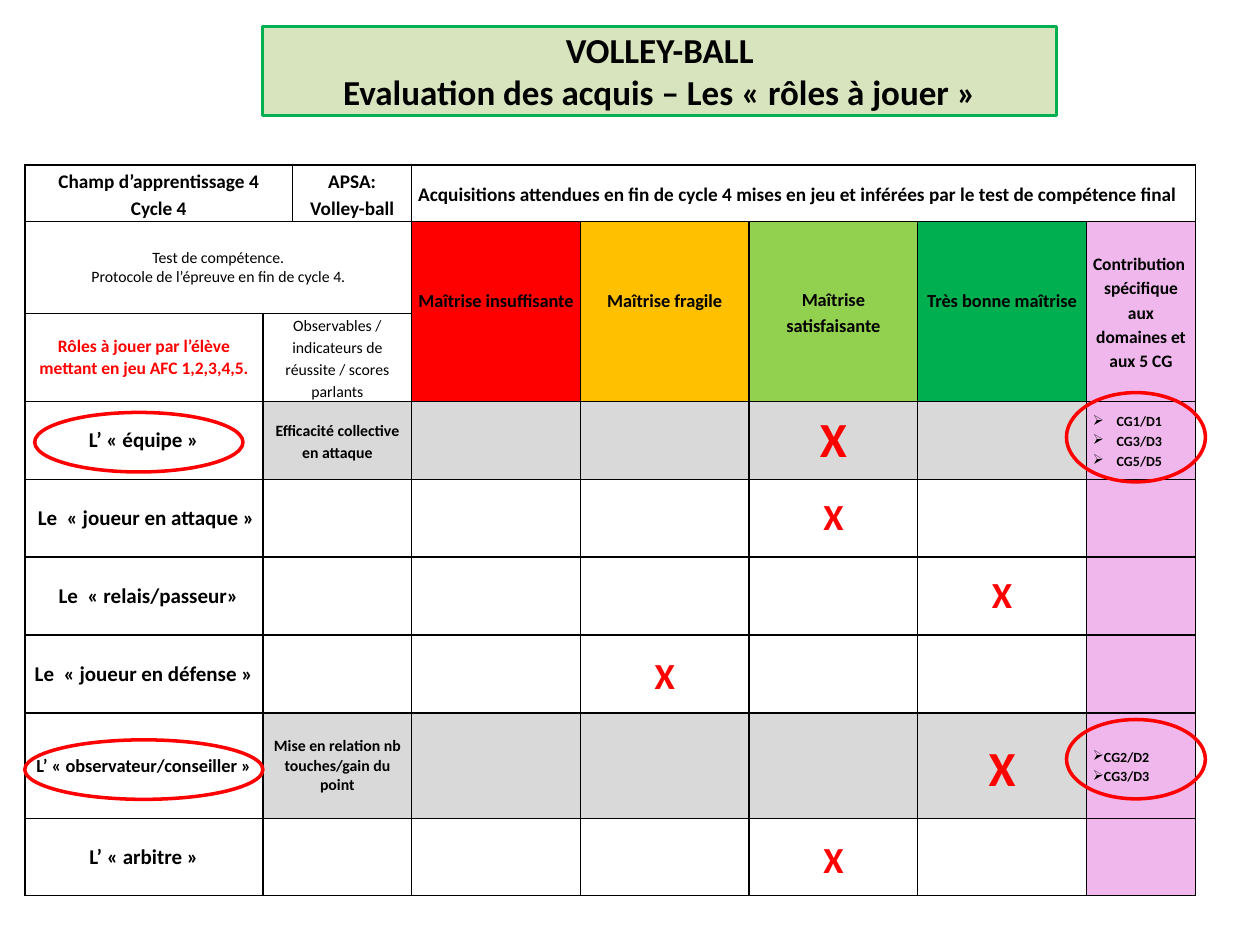
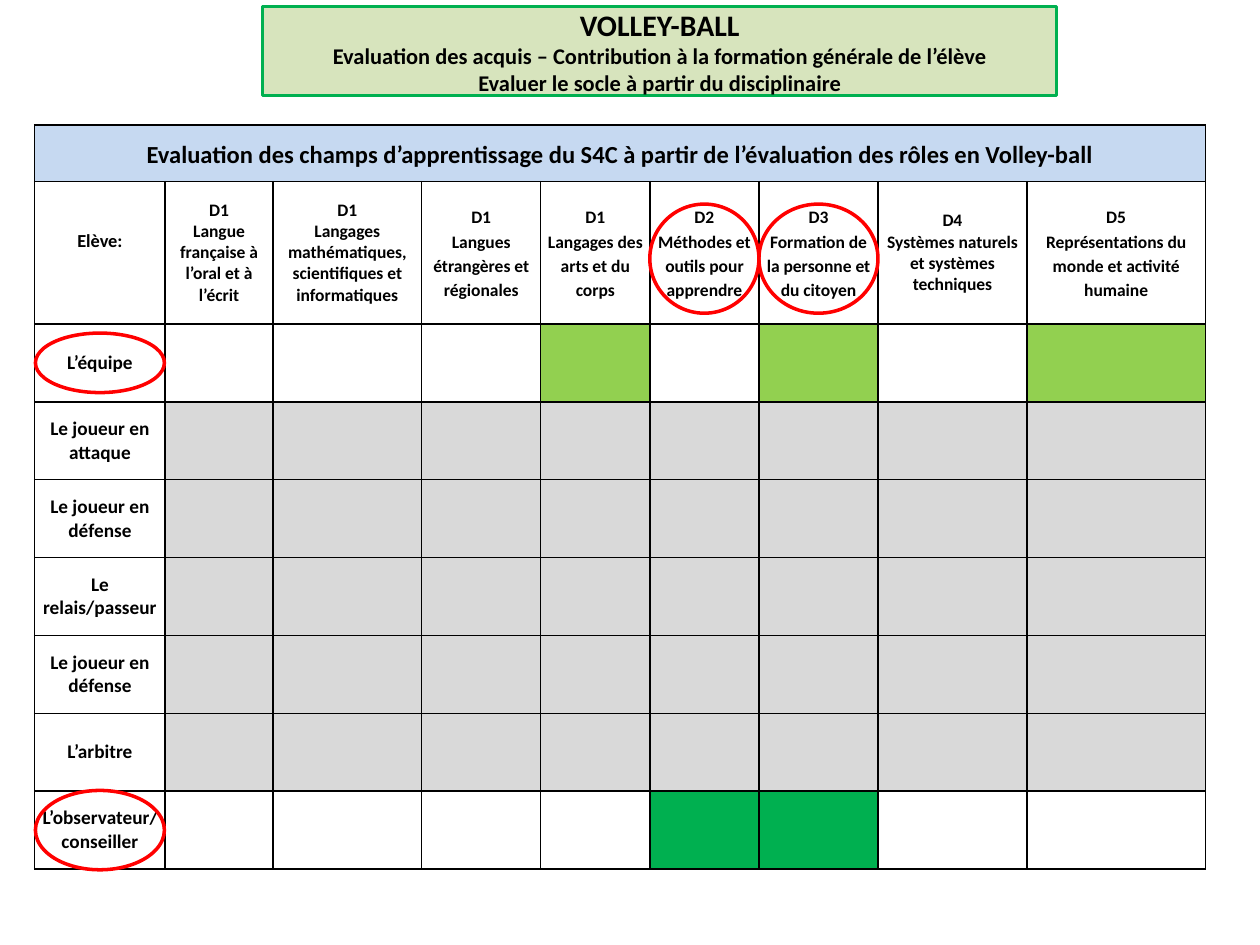
import pptx
import pptx.util
import pptx.dml.color
import pptx.enum.text
import pptx.enum.shapes
import pptx.oxml
import pptx.oxml.ns

Cm = pptx.util.Cm
Pt = pptx.util.Pt
ALIGN = pptx.enum.text.PP_ALIGN
ANCHOR = pptx.enum.text.MSO_ANCHOR

FONT = "Calibri"
BLACK, WHITE, RED, GREEN = "000000", "FFFFFF", "FF0000", "00B050"
LIGHT_GREEN, AMBER, GREY = "92D050", "FFC000", "D9D9D9"
PINK, BLUE, TITLE_FILL = "EFB7EC", "C6D9F1", "D7E4BD"
SLIDE_WIDTH, SLIDE_HEIGHT = 25.4, 19.05
TITLE_LEFT, TITLE_WIDTH, TITLE_HEIGHT = 5.3, 16, 1.8
CELL_MARGIN = 0.13
WIDE = 1.15

LEVELS = [
    ("Maîtrise insuffisante", RED, 0.5),
    ("Maîtrise fragile", AMBER, 0.5),
    ("Maîtrise satisfaisante", LIGHT_GREEN, 0),
    ("Très bonne maîtrise", GREEN, 0.5),
]

ROLES = [
    ("L’ « équipe »", 12, 5, 28, 1),
    (" Le  « joueur en attaque »", 12, 5, 21, 1),
    ("  Le  « relais/passeur»", 12, 6, 21, 1),
    ("Le  « joueur en défense »", 12, 4, 21, WIDE),
    ("L’ « observateur/conseiller »", 10.5, 6, 28, WIDE),
    ("L’ « arbitre »", 12, 5, 21, WIDE),
]
FIRST_ROLE, OBSERVED_ROLES = 3, (3, 7)

ROLE_TEXTS = [
    (0, 0, "Champ d’apprentissage 4\vCycle 4", 11, {"spacing": WIDE}),
    (0, 2, "APSA: Volley-ball", 11, {"spacing": WIDE}),
    (0, 3, "Acquisitions attendues en fin de cycle 4 mises en jeu et inférées "
           "par le test de compétence final", 11, {"spacing": WIDE, "align": ALIGN.LEFT}),
    (1, 0, "Test de compétence.\nProtocole de l’épreuve en fin de cycle 4.", 9, {"bold": False}),
    (1, 7, "Contribution  spécifique aux domaines et aux 5 CG", 10, {"spacing": WIDE}),
    (2, 0, "Rôles à jouer par l’élève mettant en jeu AFC 1,2,3,4,5.", 10, {"color": RED}),
    (2, 1, "Observables / indicateurs de réussite / scores parlants", 9,
     {"spacing": WIDE, "bold": False, "anchor": ANCHOR.TOP}),
    (3, 1, "Efficacité collective en attaque", 9, {"spacing": WIDE}),
    (3, 7, "CG1/D1\nCG3/D3\nCG5/D5", 8, {"spacing": WIDE, "align": ALIGN.LEFT, "hang": 0.48}),
    (7, 1, "Mise en relation nb touches/gain du point", 9, {}),
    (7, 7, "CG2/D2\nCG3/D3", 8, {"spacing": WIDE, "align": ALIGN.LEFT, "hang": 0}),
]
for column, (level, _, below) in enumerate(LEVELS, 3):
    ROLE_TEXTS.append((1, column, level, 10.5, {"spacing": WIDE, "below": below}))
for row, (role, size, mark, mark_size, spacing) in enumerate(ROLES, FIRST_ROLE):
    ROLE_TEXTS.append((row, 0, role, size, {}))
    ROLE_TEXTS.append((row, mark, "X", mark_size, {"color": RED, "spacing": spacing}))

ROLE_FILLS = {(row, column): GREY for row in OBSERVED_ROLES for column in range(1, 7)}
ROLE_FILLS.update({(row, 7): PINK for row in range(1, 9)})
ROLE_FILLS.update({(1, column): fill for column, (_, fill, _) in enumerate(LEVELS, 3)})

DOMAINS = [
    ("D1\nLangue française à l’oral et à l’écrit", 1),
    ("D1\nLangages mathématiques, scientifiques et informatiques", 1),
    ("D1\nLangues étrangères et régionales", WIDE),
    ("D1\nLangages des arts et du corps", WIDE),
    ("D2\nMéthodes et outils pour apprendre", WIDE),
    ("D3\nFormation de la personne et du citoyen", WIDE),
    ("D4\nSystèmes naturels et systèmes techniques", 1),
    ("D5\nReprésentations du monde et activité humaine", WIDE),
]
PLAYERS = ["L’équipe", "Le joueur en attaque", "Le joueur en défense", "Le relais/passeur",
           "Le joueur en défense", "L’arbitre", "L’observateur/conseiller"]

DOMAIN_TEXTS = [
    (0, 0, "Evaluation des champs d’apprentissage du S4C à partir de l’évaluation "
           "des rôles en Volley-ball", 14, {"spacing": WIDE}),
    (1, 0, "Elève:", 10.5, {"below": 0.45}),
]
DOMAIN_TEXTS += [(1, column, domain, 10, {"spacing": spacing})
                 for column, (domain, spacing) in enumerate(DOMAINS, 1)]
DOMAIN_TEXTS += [(row, 0, player, 11, {}) for row, player in enumerate(PLAYERS, 2)]

DOMAIN_FILLS = {(row, column): GREY for row in range(3, 8) for column in range(1, 9)}
DOMAIN_FILLS.update({(1, column): WHITE for column in range(3, 9)})
DOMAIN_FILLS.update({(2, column): LIGHT_GREEN for column in (4, 6, 8)})
DOMAIN_FILLS.update({(2, column): WHITE for column in (3, 5)})
DOMAIN_FILLS.update({(8, column): GREEN for column in (5, 6)})
DOMAIN_FILLS[0, 0] = BLUE

SLIDES = [
    {
        "title": [("VOLLEY-BALL", 20), ("Evaluation des acquis – Les « rôles à jouer »", 20)],
        "title_top": 0.53,
        "corner": (0.5, 3.33),
        "columns": [4.8, 0.6, 2.4] + [3.4] * 4 + [2.2],
        "rows": [1.14, 1.85, 1.77] + [1.57] * 4 + [2.13, 1.55],
        "merges": [(0, 0, 0, 1), (0, 3, 0, 7), (1, 0, 1, 2)]
                  + [(1, column, 2, column) for column in range(3, 8)]
                  + [(row, 1, row, 2) for row in range(2, 9)],
        "texts": ROLE_TEXTS,
        "fills": ROLE_FILLS,
        "rings": [(7, 0, 4.8, 1.2, 0, 0.08), (7, 7, 2.8, 1.6, -0.1, -0.13),
                  (3, 0, 4.2, 1.2, -0.1, 0.04), (3, 7, 2.8, 1.8, -0.1, -0.06)],
    },
    {
        "title": [("VOLLEY-BALL", 17),
                  ("Evaluation des acquis – Contribution à la formation générale de l’élève", 12.8),
                  ("Evaluer le socle à partir du disciplinaire", 12.8)],
        "title_top": 0.13,
        "corner": (0.7, 2.52),
        "columns": [2.63, 2.17, 3, 2.4, 2.2, 2.2, 2.4, 3, 3.6],
        "rows": [1.14, 2.87] + [1.57] * 7,
        "merges": [(0, 0, 0, 8)],
        "texts": DOMAIN_TEXTS,
        "fills": DOMAIN_FILLS,
        "rings": [(1, 6, 2.4, 2.2, 0, 0.12), (1, 5, 2.2, 2.2, 0, 0.12),
                  (8, 0, 2.6, 1.6, 0, 0), (2, 0, 2.6, 1.2, 0, 0)],
    },
]


def rgb(value):
    return pptx.dml.color.RGBColor.from_string(value)


def apply(target, values):
    for name, value in values.items():
        setattr(target, name, value)


def outline(shape, color, width):
    shape.line.color.rgb = rgb(color)
    shape.line.width = Pt(width)


def write(frame, lines, bold=True, color=BLACK, align=ALIGN.CENTER, spacing=1):
    for index, (text, size) in enumerate(lines):
        paragraph = frame.paragraphs[0] if index == 0 else frame.add_paragraph()
        paragraph.text = text
        apply(paragraph, {"alignment": align, "line_spacing": spacing})
        for run in paragraph.runs:
            apply(run.font, {"name": FONT, "size": Pt(size), "bold": bold})
            run.font.color.rgb = rgb(color)


def add_bullets(frame, hang):
    for paragraph in frame.paragraphs:
        properties = paragraph._p.get_or_add_pPr()
        properties.set("marL", str(Cm(hang)))
        properties.set("indent", str(-Cm(hang)))
        bullet = pptx.oxml.ns.qn("a:buChar")
        properties.append(properties.makeelement(bullet, {"char": "➢"}))


def add_borders(cell):
    properties = cell._tc.get_or_add_tcPr()
    for side in ("lnL", "lnR", "lnT", "lnB"):
        properties.append(pptx.oxml.parse_xml(
            f'<a:{side} {pptx.oxml.ns.nsdecls("a")} w="{Pt(1)}"><a:solidFill>'
            f'<a:srgbClr val="{BLACK}"/></a:solidFill></a:{side}>'))


def add_title(slide, lines, top):
    title = slide.shapes.title
    apply(title, {"left": Cm(TITLE_LEFT), "top": Cm(top),
                  "width": Cm(TITLE_WIDTH), "height": Cm(TITLE_HEIGHT)})
    title.fill.solid()
    title.fill.fore_color.rgb = rgb(TITLE_FILL)
    outline(title, GREEN, 1.75)
    apply(title.text_frame, {"word_wrap": True, "vertical_anchor": ANCHOR.MIDDLE,
                             "auto_size": pptx.enum.text.MSO_AUTO_SIZE.NONE})
    write(title.text_frame, lines)


def fill_cell(cell, text, size, anchor=ANCHOR.MIDDLE, below=0, hang=None, **style):
    apply(cell, {"margin_left": Cm(CELL_MARGIN), "margin_right": Cm(CELL_MARGIN),
                 "margin_top": 0, "margin_bottom": Cm(below), "vertical_anchor": anchor})
    write(cell.text_frame, [(line, size) for line in text.split("\n")], **style)
    if hang is not None:
        add_bullets(cell.text_frame, hang)


def add_grid(slide, content):
    columns, rows = content["columns"], content["rows"]
    left, top = content["corner"]
    grid = slide.shapes.add_table(len(rows), len(columns), Cm(left), Cm(top),
                                  Cm(sum(columns)), Cm(sum(rows))).table
    apply(grid, {"first_row": False, "horz_banding": False})
    for column, width in zip(grid.columns, columns):
        column.width = Cm(width)
    for row, height in zip(grid.rows, rows):
        row.height = Cm(height)
    for row in range(len(rows)):
        for column in range(len(columns)):
            cell = grid.cell(row, column)
            add_borders(cell)
            fill = content["fills"].get((row, column))
            if fill:
                cell.fill.solid()
                cell.fill.fore_color.rgb = rgb(fill)
            else:
                cell.fill.background()
    for first_row, first_column, last_row, last_column in content["merges"]:
        grid.cell(first_row, first_column).merge(grid.cell(last_row, last_column))
    for row, column, text, size, options in content["texts"]:
        fill_cell(grid.cell(row, column), text, size, **options)


def add_rings(slide, content):
    columns, rows = content["columns"], content["rows"]
    left, top = content["corner"]
    for row, column, width, height, right_shift, down_shift in content["rings"]:
        x = left + sum(columns[:column]) + (columns[column] - width) / 2 + right_shift
        y = top + sum(rows[:row]) + (rows[row] - height) / 2 + down_shift
        ring = slide.shapes.add_shape(pptx.enum.shapes.MSO_SHAPE.OVAL,
                                      Cm(x), Cm(y), Cm(width), Cm(height))
        ring.shadow.inherit = False
        ring.fill.background()
        outline(ring, RED, 2)


def main():
    deck = pptx.Presentation()
    apply(deck, {"slide_width": Cm(SLIDE_WIDTH), "slide_height": Cm(SLIDE_HEIGHT)})
    title_only = deck.slide_layouts[5]
    for content in SLIDES:
        slide = deck.slides.add_slide(title_only)
        add_title(slide, content["title"], content["title_top"])
        add_grid(slide, content)
        add_rings(slide, content)
    deck.save("out.pptx")


if __name__ == "__main__":
    main()
